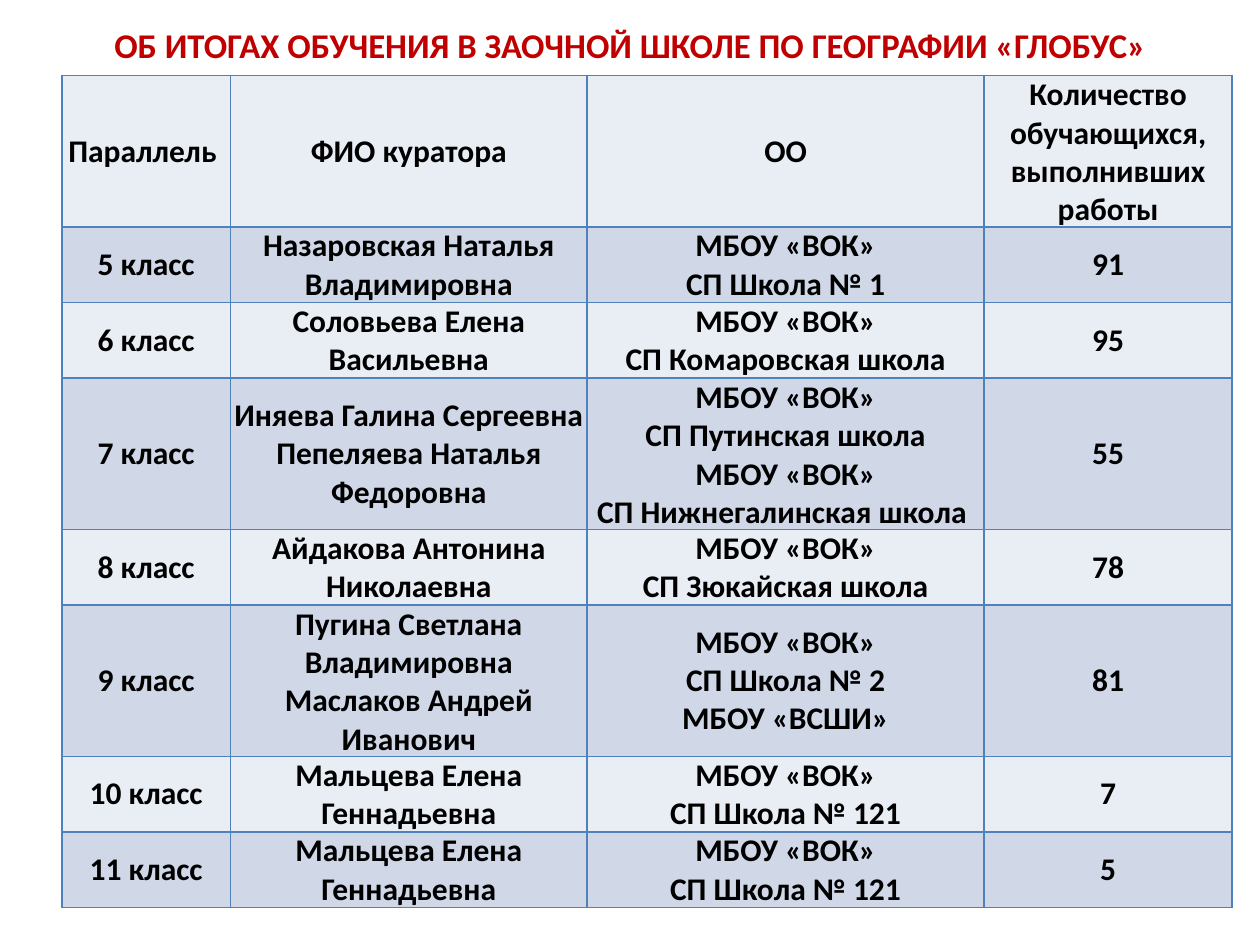
from lxml.etree import SubElement
from pptx import Presentation
from pptx.dml.color import RGBColor
from pptx.enum.text import MSO_ANCHOR, PP_ALIGN
from pptx.oxml.ns import qn
from pptx.util import Inches, Pt

RED = RGBColor(0xC0, 0x00, 0x00)
BLACK = RGBColor(0x00, 0x00, 0x00)
BLUE = RGBColor(0x4F, 0x81, 0xBD)
PALE = RGBColor(0xE9, 0xED, 0xF4)
DARK = RGBColor(0xD0, 0xD8, 0xE8)

TITLE = "ОБ ИТОГАХ ОБУЧЕНИЯ В ЗАОЧНОЙ ШКОЛЕ ПО ГЕОГРАФИИ «ГЛОБУС»"
WIDTHS = [1.34, 2.83, 3.15, 1.97]
LINE = 0.3  # height of one text line in the table

# Each row: number of text lines, then the cells
ROWS = [
    (4, "Параллель ", "ФИО куратора", "ОО",
     "Количество обучающихся, выполнивших работы"),
    (2, "5 класс", "Назаровская Наталья Владимировна",
     "МБОУ «ВОК»\nСП Школа № 1", "91"),
    (2, "6 класс", "Соловьева Елена Васильевна",
     "МБОУ «ВОК»\nСП Комаровская школа", "95"),
    (4, "7 класс", "Иняева Галина Сергеевна\nПепеляева Наталья Федоровна",
     "МБОУ «ВОК»\nСП Путинская школа\nМБОУ «ВОК»\nСП Нижнегалинская школа ",
     "55"),
    (2, "8 класс", "Айдакова Антонина Николаевна",
     "МБОУ «ВОК»\nСП Зюкайская школа", "78"),
    (4, "9 класс", "Пугина Светлана Владимировна\nМаслаков Андрей Иванович",
     "МБОУ «ВОК»\nСП Школа № 2\nМБОУ «ВСШИ»", "81"),
    (2, "10 класс", "Мальцева Елена Геннадьевна",
     "МБОУ «ВОК»\nСП Школа № 121", "7"),
    (2, "11 класс", "Мальцева Елена Геннадьевна",
     "МБОУ «ВОК»\nСП Школа № 121", "5"),
]


class Deck:
    font = "Calibri"

    def __init__(self, slide):
        self.slide = slide

    def label(self, frame, text, size, color):
        frame.word_wrap = True
        frame.text = text
        for par in frame.paragraphs:
            par.alignment = PP_ALIGN.CENTER
            par.font.name = self.font
            par.font.size = Pt(size)
            par.font.bold = True
            par.font.color.rgb = color

    def title(self, text, left, top, width, height):
        box = self.slide.shapes.add_textbox(
            Inches(left), Inches(top), Inches(width), Inches(height))
        self.label(box.text_frame, text, 19.8, RED)
        box.text_frame.vertical_anchor = MSO_ANCHOR.MIDDLE

    def border(self, cell):
        props = cell._tc.get_or_add_tcPr()
        for side in ("lnL", "lnR", "lnT", "lnB"):
            line = SubElement(props, qn(f"a:{side}"), w=str(Pt(1)))
            fill = SubElement(line, qn("a:solidFill"))
            SubElement(fill, qn("a:srgbClr"), val=str(BLUE))

    def cell(self, cell, text, fill):
        cell.margin_left = cell.margin_right = 0
        cell.margin_top = cell.margin_bottom = 0
        cell.vertical_anchor = MSO_ANCHOR.MIDDLE
        self.border(cell)
        cell.fill.solid()
        cell.fill.fore_color.rgb = fill
        self.label(cell.text_frame, text, 18, BLACK)

    def table(self, rows, widths, left, top):
        height = LINE * sum(row[0] for row in rows)
        table = self.slide.shapes.add_table(
            len(rows), len(widths), Inches(left), Inches(top),
            Inches(sum(widths)), Inches(height)).table
        for col, width in zip(table.columns, widths):
            col.width = Inches(width)
        for i, (lines, *texts) in enumerate(rows):
            table.rows[i].height = Inches(LINE * lines)
            for j, text in enumerate(texts):
                self.cell(table.cell(i, j), text, DARK if i % 2 else PALE)


def main():
    show = Presentation()
    show.slide_width, show.slide_height = Inches(10), Inches(7.5)
    deck = Deck(show.slides.add_slide(show.slide_layouts[6]))

    # Heading
    deck.title(TITLE, 0.5, 0.12, 9, 0.47)

    # Results by grade
    deck.table(ROWS, WIDTHS, 0.49, 0.6)

    show.save("out.pptx")


if __name__ == "__main__":
    main()
